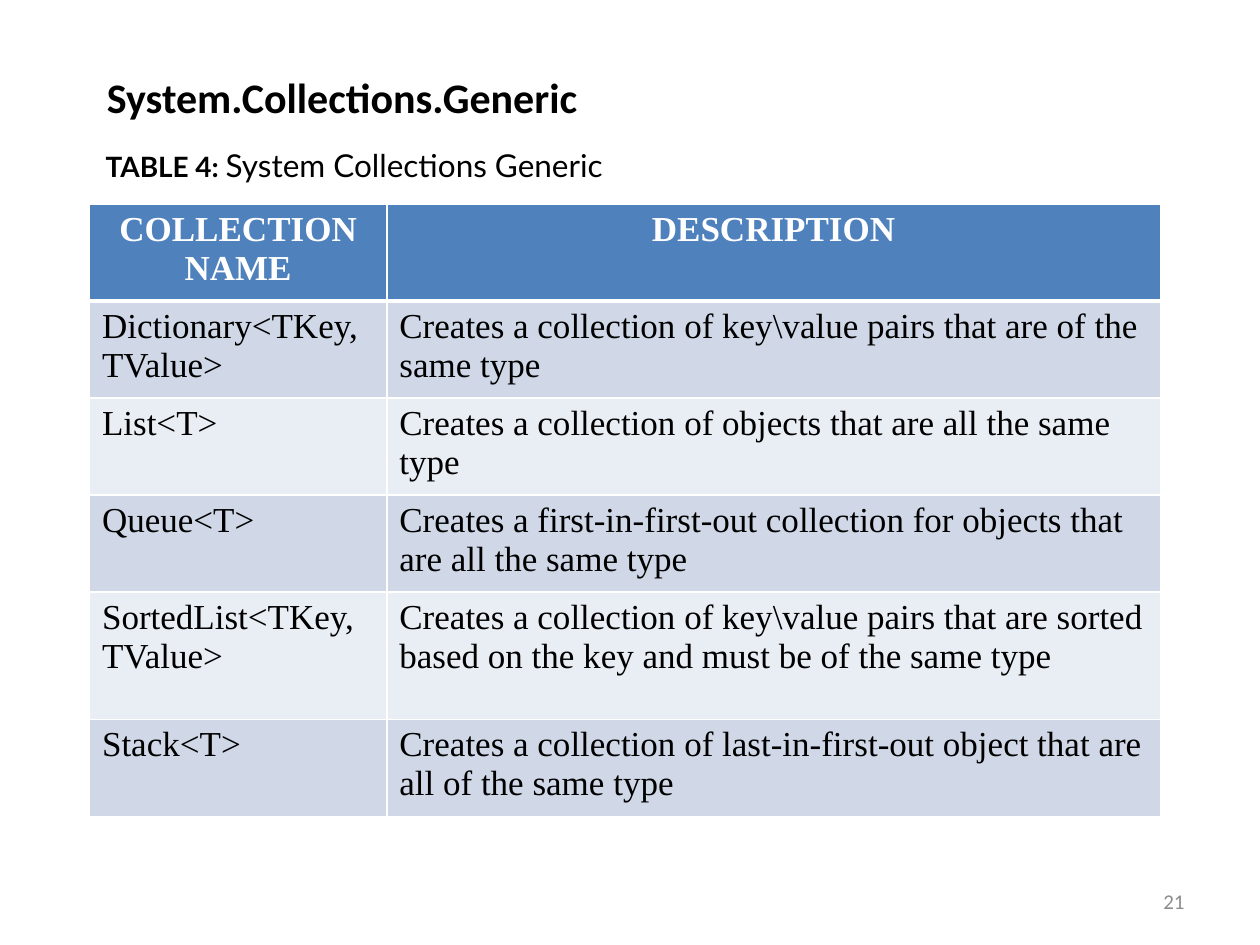
from lxml import etree
from pptx import Presentation
from pptx import util as u
from pptx.dml.color import RGBColor
from pptx.enum import text
from pptx.oxml import ns

BLACK = RGBColor(0x00, 0x00, 0x00)
WHITE = RGBColor(0xFF, 0xFF, 0xFF)
GRAY = RGBColor(0x8C, 0x8C, 0x8C)
HEADER_BLUE = RGBColor(0x4F, 0x81, 0xBD)
BANDS = [RGBColor(0xE9, 0xED, 0xF4), RGBColor(0xD0, 0xD8, 0xE8)]

deck = Presentation()
deck.slide_width, deck.slide_height = u.Inches(10), u.Inches(7.5)
page = deck.slides.add_slide(deck.slide_layouts[6])


def add_span(para, words, color, **font_values):
    span = para.add_run()
    span.text = words
    span.font.color.rgb = color
    for name, value in font_values.items():
        setattr(span.font, name, value)


def add_border(cell, side, points):
    line = etree.SubElement(cell._tc.get_or_add_tcPr(), ns.qn("a:ln" + side),
                            w=str(u.Pt(points)))
    fill = etree.SubElement(line, ns.qn("a:solidFill"))
    etree.SubElement(fill, ns.qn("a:srgbClr"), val=str(WHITE))


# Heading, caption and page number: place, frame format, alignment, spans
label = {"word_wrap": False, "vertical_anchor": text.MSO_ANCHOR.TOP}
footer = {"word_wrap": True, "vertical_anchor": text.MSO_ANCHOR.MIDDLE}
left, right = text.PP_ALIGN.LEFT, text.PP_ALIGN.RIGHT
boxes = [
    ((0.75, 0.52, 4.03, 0.5), label, left, BLACK,
     [("System.Collections.Generic", "Calibri", 24, True)]),
    ((0.74, 1.11, 4.43, 0.4), label, left, BLACK,
     [("TABLE 4: ", "Lato", 16, True),
      ("System Collections Generic", "Lato", 18, False)]),
    ((7.17, 6.95, 2.33, 0.4), footer, right, GRAY,
     [("21", "Calibri", 12, False)]),
]
for place, frame_format, alignment, color, spans in boxes:
    frame = page.shapes.add_textbox(*map(u.Inches, place)).text_frame
    for name, value in frame_format.items():
        setattr(frame, name, value)
    para = frame.paragraphs[0]
    para.alignment = alignment
    for words, font_name, size, bold in spans:
        add_span(para, words, color, name=font_name, size=u.Pt(size), bold=bold)

# Table of collections
rows = [
    ("COLLECTION NAME", "DESCRIPTION"),
    ("Dictionary<TKey, TValue>",
     "Creates a collection of key\\value pairs that are of the same type"),
    ("List<T>", "Creates a collection of objects that are all the same type"),
    ("Queue<T>",
     "Creates a first-in-first-out collection for objects that are all the same type"),
    ("SortedList<TKey, TValue>",
     "Creates a collection of key\\value pairs that are sorted based on the key "
     "and must be of the same type"),
    ("Stack<T>",
     "Creates a collection of last-in-first-out object that are all of the same type"),
]
column_widths = [2.36, 6.14]
row_heights = [0.77] * 4 + [1.01, 0.77]
table = page.shapes.add_table(
    len(rows), len(column_widths), u.Inches(0.71), u.Inches(1.62),
    u.Inches(sum(column_widths)), u.Inches(sum(row_heights))).table
for column, width in zip(table.columns, column_widths):
    column.width = u.Inches(width)

for row_index, (row, height) in enumerate(zip(rows, row_heights)):
    table.rows[row_index].height = u.Inches(height)
    header = row_index == 0
    for column_index, words in enumerate(row):
        cell = table.cell(row_index, column_index)
        for side in "LRTB":
            heavy = (header and side == "B") or (row_index == 1 and side == "T")
            add_border(cell, side, 3 if heavy else 1)
        cell.fill.solid()
        cell.fill.fore_color.rgb = HEADER_BLUE if header else BANDS[row_index % 2]
        para = cell.text_frame.paragraphs[0]
        para.alignment = text.PP_ALIGN.CENTER if header else left
        add_span(para, words, WHITE if header else BLACK,
                 name="Times New Roman", size=u.Pt(20), bold=header)

deck.save("out.pptx")
